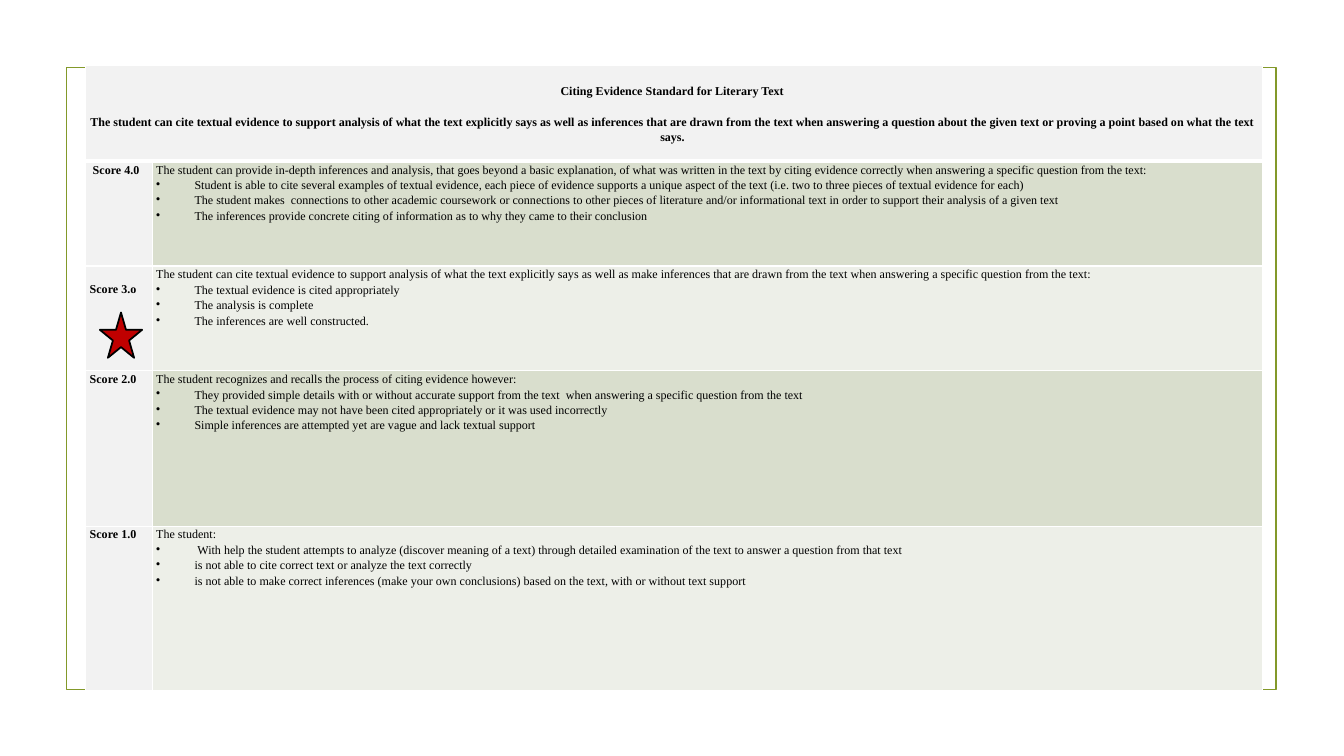
from dataclasses import dataclass

from lxml import etree
from pptx import Presentation
from pptx.dml.color import RGBColor
from pptx.enum import shapes, text
from pptx.oxml import ns
from pptx.util import Inches, Pt


@dataclass(frozen=True)
class Theme:
    font: str = "Times New Roman"
    size: float = 8.6
    leading: float = 1.15
    line_height: float = 11.3  # points taken by one line of text
    ink: str = "000000"
    frame: str = "83992A"
    border: str = "FFFFFF"
    label: str = "F2F2F2"
    bands: tuple = ("D9DECD", "EDEFE8")
    star: str = "C00000"
    outline: float = 1.25


class RubricSlide:
    def __init__(self, slide, theme):
        self.slide = slide
        self.theme = theme

    def shape(self, kind, left, top, width, height, line, fill=None):
        item = self.slide.shapes.add_shape(
            kind, Inches(left), Inches(top), Inches(width), Inches(height))
        item.shadow.inherit = False
        if fill:
            item.fill.solid()
            item.fill.fore_color.rgb = RGBColor.from_string(fill)
        else:
            item.fill.background()
        item.line.color.rgb = RGBColor.from_string(line)
        item.line.width = Pt(self.theme.outline)

    def table(self, left, top, widths, heights):
        grid = self.slide.shapes.add_table(
            len(heights), len(widths), Inches(left), Inches(top),
            Inches(sum(widths)), Inches(sum(heights))).table
        grid.first_row = grid.horz_banding = False
        for column, width in zip(grid.columns, widths):
            column.width = Inches(width)
        for row, height in zip(grid.rows, heights):
            row.height = Inches(height)
        return grid

    def cell(self, cell, fill, lines, bold=False, bottom=1, top_inset=0):
        cell.margin_left = cell.margin_right = Inches(0.04)
        cell.margin_top, cell.margin_bottom = Inches(top_inset), 0
        self.borders(cell, bottom)
        cell.fill.solid()
        cell.fill.fore_color.rgb = RGBColor.from_string(fill)
        cell.text_frame.text = "\n".join(lines)
        for paragraph in cell.text_frame.paragraphs:
            paragraph.line_spacing = self.theme.leading
            if not bold and paragraph.text != lines[0]:
                self.bullet(paragraph)
            font = paragraph.font
            font.name, font.size, font.bold = self.theme.font, Pt(self.theme.size), bold
            font.color.rgb = RGBColor.from_string(self.theme.ink)

    def borders(self, cell, bottom):
        properties = cell._tc.get_or_add_tcPr()
        for side, points in (("L", 1), ("R", 1), ("T", 1), ("B", bottom)):
            edge = etree.SubElement(properties, ns.qn(f"a:ln{side}"), w=str(Pt(points)))
            solid = etree.SubElement(edge, ns.qn("a:solidFill"))
            etree.SubElement(solid, ns.qn("a:srgbClr"), val=self.theme.border)

    def bullet(self, paragraph):
        properties = paragraph._p.get_or_add_pPr()
        properties.set("marL", str(Inches(0.38)))
        properties.set("indent", str(Inches(-0.38)))
        etree.SubElement(properties, ns.qn("a:buChar"), char="•")


HEADING = [
    "Citing Evidence Standard for Literary Text ",
    "The student can cite textual evidence to support analysis of what the text explicitly says as well as inferences that are drawn from the text when answering a question about the given text or proving a point based on what the text says. ",
]

# Score label, row height, inset above the label, description and its bullets
SCORES = [
    (" Score 4.0", 1.04, 0, [
        "The student can provide in-depth inferences and analysis, that goes beyond a basic explanation, of what was written in the text by citing evidence correctly when answering a specific question from the text:",
        "Student is able to cite several examples of textual evidence, each piece of evidence supports a unique aspect of the text (i.e. two to three pieces of textual evidence for each)",
        "The student makes  connections to other academic coursework or connections to other pieces of literature and/or informational text in order to support their analysis of a given text",
        "The inferences provide concrete citing of information as to why they came to their conclusion",
    ]),
    ("Score 3.o", 1.04, 0.15, [
        "The student can cite textual evidence to support analysis of what the text explicitly says as well as make inferences that are drawn from the text when answering a specific question from the text:",
        "The textual evidence is cited appropriately",
        "The analysis is complete",
        "The inferences are well constructed.",
    ]),
    ("Score 2.0", 1.54, 0, [
        "The student recognizes and recalls the process of citing evidence however:",
        "They provided simple details with or without accurate support from the text  when answering a specific question from the text",
        "The textual evidence may not have been cited appropriately or it was used incorrectly",
        "Simple inferences are attempted yet are vague and lack textual support",
    ]),
    ("Score 1.0", 1.63, 0, [
        "The student:",
        " With help the student attempts to analyze (discover meaning of a text) through detailed examination of the text to answer a question from that text",
        "is not able to cite correct text or analyze the text correctly",
        "is not able to make correct inferences (make your own conclusions) based on the text, with or without text support",
    ]),
]


def main():
    deck = Presentation()
    deck.slide_width, deck.slide_height = Inches(13.33), Inches(7.5)
    theme = Theme()
    rubric = RubricSlide(deck.slides.add_slide(deck.slide_layouts[6]), theme)

    # Frame behind the table
    rubric.shape(shapes.MSO_SHAPE.RECTANGLE, 0.66, 0.67, 12, 6.17, theme.frame)

    # Heading row across both columns
    grid = rubric.table(0.85, 0.65, [0.66, 11.01],
                        [0.95] + [height for _, height, _, _ in SCORES])
    heading = grid.cell(0, 0)
    heading.merge(grid.cell(0, 1))
    rubric.cell(heading, theme.label, HEADING, bold=True, bottom=3)
    heading.vertical_anchor = text.MSO_ANCHOR.MIDDLE
    for paragraph in heading.text_frame.paragraphs:
        paragraph.alignment = text.PP_ALIGN.CENTER
    heading.text_frame.paragraphs[1].space_before = Pt(theme.line_height)

    # Score rows
    for row, (score, _, inset, description) in enumerate(SCORES, start=1):
        rubric.cell(grid.cell(row, 0), theme.label, [score], bold=True, top_inset=inset)
        rubric.cell(grid.cell(row, 1), theme.bands[(row - 1) % 2], description)

    # Star marking the target score
    rubric.shape(shapes.MSO_SHAPE.STAR_5_POINT, 0.99, 3.1, 0.42, 0.45,
                 theme.ink, theme.star)

    deck.save("out.pptx")


if __name__ == "__main__":
    main()
